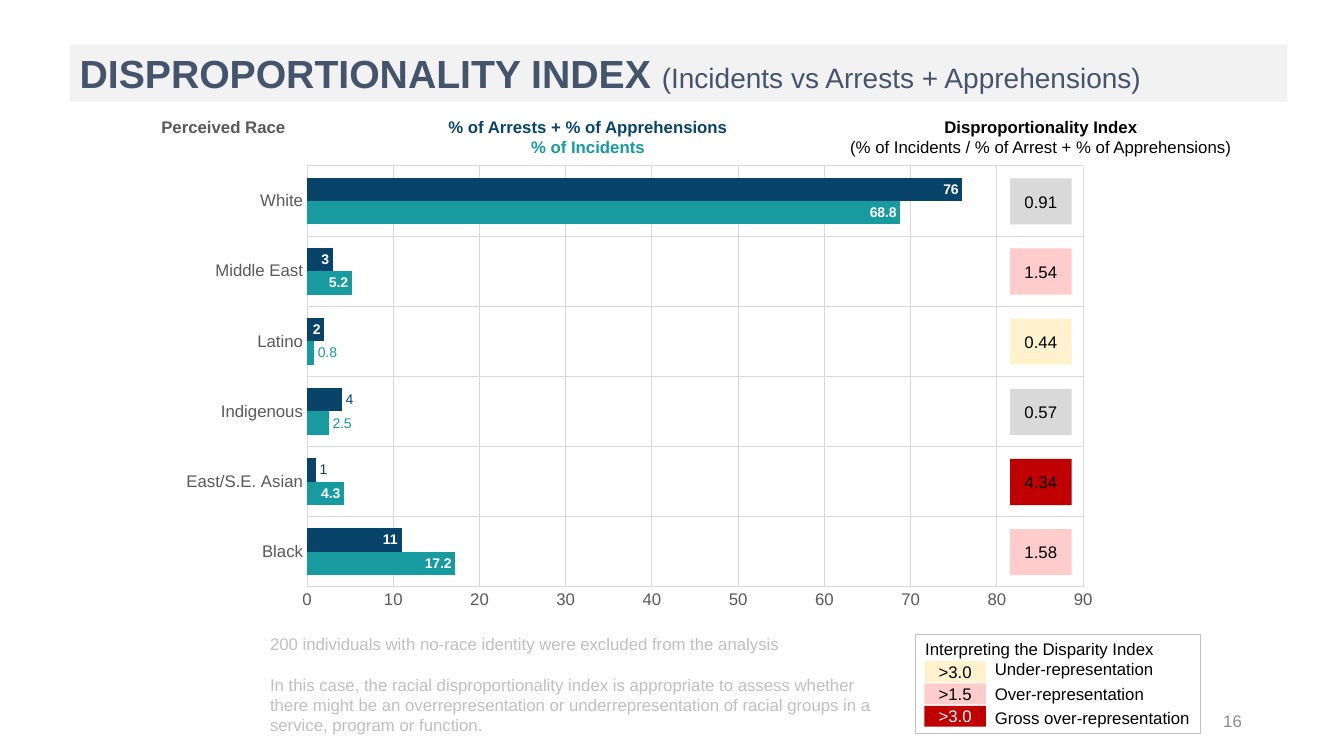
from lxml import etree
from pptx import Presentation
from pptx.chart.data import CategoryChartData
from pptx.dml.color import RGBColor
from pptx.enum.chart import XL_CHART_TYPE, XL_LABEL_POSITION, XL_TICK_MARK
from pptx.enum.shapes import MSO_SHAPE
from pptx.enum.text import MSO_ANCHOR, MSO_AUTO_SIZE, PP_ALIGN
from pptx.oxml import parse_xml
from pptx.oxml.ns import nsdecls, qn
from pptx.util import Pt

BAR = XL_CHART_TYPE.BAR_CLUSTERED
INSIDE, OUTSIDE = XL_LABEL_POSITION.INSIDE_END, XL_LABEL_POSITION.OUTSIDE_END
NO_TICK = XL_TICK_MARK.NONE
RECT = MSO_SHAPE.RECTANGLE
TOP, MIDDLE = MSO_ANCHOR.TOP, MSO_ANCHOR.MIDDLE
LEFT, CENTER, RIGHT = PP_ALIGN.LEFT, PP_ALIGN.CENTER, PP_ALIGN.RIGHT
FONT = "Arial"

COLORS = {
    "band": "F2F2F2", "title": "44546A", "arrests": "08446A", "incidents": "179B9E",
    "axis": "595959", "grid": "D9D9D9", "note": "BFBFBF", "number": "8C8C8C",
    "black": "000000", "white": "FFFFFF",
    "even": "D9D9D9", "under": "FFF2CC", "over": "FFCCCC", "gross": "C00000",
}

# Top to bottom: group, % of incidents, % of arrests, index, rating
GROUPS = [
    ("White", 68.8, 76, "0.91", "even"),
    ("Middle East", 5.2, 3, "1.54", "over"),
    ("Latino", 0.8, 2, "0.44", "under"),
    ("Indigenous", 2.5, 4, "0.57", "even"),
    ("East/S.E. Asian", 4.3, 1, "4.34", "gross"),
    ("Black", 17.2, 11, "1.58", "over"),
]
RATINGS = [
    (">3.0", "Under-representation", "under", "black"),
    (">1.5", "Over-representation", "over", "black"),
    (">3.0", "Gross over-representation", "gross", "white"),
]


def rgb(name):
    return RGBColor.from_string(COLORS[name])


def style_font(font, size, color, bold=False):
    font.name, font.size, font.bold = FONT, Pt(size), bold
    font.color.rgb = rgb(color)


def write(shape, lines, align=LEFT, anchor=TOP):
    """Fill a shape with lines of (text, size, color, bold)."""
    frame = shape.text_frame
    frame.text = "\n".join(line[0] for line in lines)
    frame.word_wrap, frame.vertical_anchor = True, anchor
    for paragraph, (_, size, color, bold) in zip(frame.paragraphs, lines):
        paragraph.alignment = align
        style_font(paragraph.runs[0].font, size, color, bold)
    return frame


def add_text(slide, box, lines, align=LEFT, anchor=TOP):
    shape = slide.shapes.add_textbox(*map(Pt, box))
    return write(shape, lines, align, anchor)


def add_chip(slide, box, text, fill, color="black"):
    chip = slide.shapes.add_shape(RECT, *map(Pt, box))
    chip.shadow.inherit = False
    chip.fill.solid()
    chip.fill.fore_color.rgb = rgb(fill)
    chip.line.fill.background()
    frame = write(chip, [(text, 12, color, False)], CENTER, MIDDLE)
    frame.margin_top = frame.margin_bottom = 0


def add_title(slide, box):
    title = slide.shapes.title
    title.left, title.top, title.width, title.height = map(Pt, box)
    title.fill.solid()
    title.fill.fore_color.rgb = rgb("band")
    frame = write(title, [("DISPROPORTIONALITY INDEX ", 28, "title", True)], LEFT, MIDDLE)
    frame.auto_size = MSO_AUTO_SIZE.NONE
    subtitle = frame.paragraphs[0].add_run()
    subtitle.text = "(Incidents vs Arrests + Apprehensions)"
    style_font(subtitle.font, 20, "title")


def add_headings(slide, top):
    add_text(slide, (105, top, 106, 22),
             [("Perceived Race", 12, "axis", True)], RIGHT)
    add_text(slide, (304, top, 232, 36),
             [("% of Arrests + % of Apprehensions", 12, "arrests", True),
              ("% of Incidents", 12, "incidents", True)], CENTER)
    add_text(slide, (591, top, 305, 36),
             [("Disproportionality Index", 12, "black", True),
              ("(% of Incidents / % of Arrest + % of Apprehensions)", 12, "black", False)],
             CENTER)


def format_series(series, color, outside):
    """Colour the bars; labels of the short bars listed in outside sit beyond them."""
    series.format.fill.solid()
    series.format.fill.fore_color.rgb = rgb(color)
    labels = series.data_labels
    labels.show_value, labels.position = True, INSIDE
    style_font(labels.font, 10, "white", True)
    for index in outside:
        label = series.points[index].data_label
        style_font(label.font, 10, color)
        label.position = OUTSIDE


def fix_plot_area(chart, x, y, w, h):
    plot_area = chart.plots[0]._element.getparent()
    for old in plot_area.findall(qn("c:layout")):
        plot_area.remove(old)
    layout = parse_xml(f"<c:layout {nsdecls('c')}><c:manualLayout/></c:layout>")
    settings = [("layoutTarget", "inner"), ("xMode", "edge"), ("yMode", "edge"),
                ("x", x), ("y", y), ("w", w), ("h", h)]
    for tag, value in settings:
        etree.SubElement(layout[0], qn(f"c:{tag}")).set("val", str(value))
    plot_area.insert(0, layout)


def add_bars(slide, box):
    rows = GROUPS[::-1]  # a bar chart counts from the bottom
    data = CategoryChartData()
    data.categories = [row[0] for row in rows]
    data.add_series("% of Incidents", [row[1] for row in rows])
    data.add_series("% of Arrests + % of Apprehensions", [row[2] for row in rows])
    chart = slide.shapes.add_chart(BAR, *map(Pt, box), data).chart
    chart.has_legend = chart.has_title = False
    style_font(chart.font, 10, "black")
    plot = chart.plots[0]
    plot.gap_width, plot.overlap, plot.vary_by_categories = 100, 0, False
    incidents, arrests = plot.series
    format_series(incidents, "incidents", (2, 3))
    format_series(arrests, "arrests", (1, 2))
    for axis in (chart.category_axis, chart.value_axis):
        axis.major_tick_mark = axis.minor_tick_mark = NO_TICK
        axis.format.line.fill.background()
        axis.has_major_gridlines = True
        axis.major_gridlines.format.line.color.rgb = rgb("grid")
        axis.major_gridlines.format.line.width = Pt(0.75)
        style_font(axis.tick_labels.font, 12, "axis")
    scale = chart.value_axis
    scale.minimum_scale, scale.maximum_scale, scale.major_unit = 0, 90, 10
    fix_plot_area(chart, 0.179, 0.034, 0.798, 0.802)


def add_index_column(slide, left, top, pitch):
    for row, (_, _, _, index, rating) in enumerate(GROUPS):
        add_chip(slide, (left, top + row * pitch, 44, 33), index, rating)


def add_key(slide, box):
    left, top = box[:2]
    panel = slide.shapes.add_shape(RECT, *map(Pt, box))
    panel.shadow.inherit = False
    panel.fill.background()
    panel.line.color.rgb, panel.line.width = rgb("note"), Pt(0.75)
    lines = ["Interpreting the Disparity Index"] + ["\t" + row[1] for row in RATINGS]
    frame = write(panel, [(line, 12, "black", False) for line in lines])
    for paragraph in frame.paragraphs[1:]:
        paragraph.space_after = Pt(3)
        stops = etree.SubElement(paragraph._p.get_or_add_pPr(), qn("a:tabLst"))
        etree.SubElement(stops, qn("a:tab"), pos=str(Pt(49.7)), algn="l")
    for row, (limit, _, rating, color) in enumerate(RATINGS):
        add_chip(slide, (left + 6.5, top + 19.4 + row * 15.9, 44, 15), limit, rating, color)


def add_notes_text(slide, box):
    lines = [
        "200 individuals with no-race identity were excluded from the analysis",
        "In this case, the racial disproportionality index is appropriate to assess whether "
        "there might be an overrepresentation or underrepresentation of racial groups in a "
        "service, program or function.",
    ]
    frame = add_text(slide, box, [(line, 12, "note", False) for line in lines])
    frame.paragraphs[0].space_after = Pt(14.5)


def main():
    deck = Presentation()
    deck.slide_width, deck.slide_height = Pt(960), Pt(540)
    slide = deck.slides.add_slide(deck.slide_layouts[5])
    add_title(slide, (49.7, 31.7, 869.8, 41))
    add_headings(slide, 80)
    add_bars(slide, (95, 105.8, 694.8, 375.1))
    add_index_column(slide, 721.5, 127.4, 50.1)
    add_notes_text(slide, (185.8, 449.3, 444.2, 80))
    add_key(slide, (653.8, 452.9, 203.8, 71.3))
    add_text(slide, (678.2, 500.4, 216, 28.8), [("16", 12, "number", False)], RIGHT, MIDDLE)
    deck.save("out.pptx")


if __name__ == "__main__":
    main()
